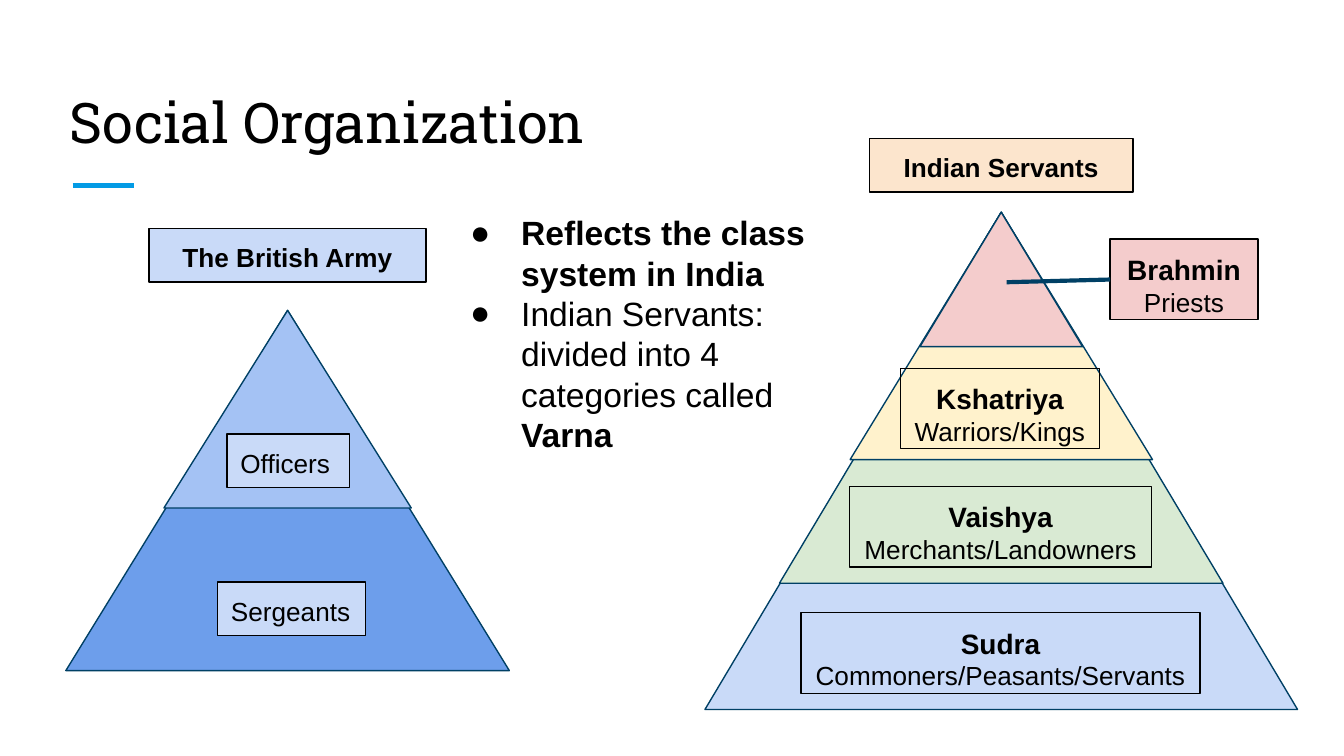
from dataclasses import dataclass, field

from lxml import etree
from pptx import Presentation
from pptx import util as u
from pptx.dml.color import RGBColor
from pptx.enum import shapes, text
from pptx.oxml.ns import qn

# The slide is a grid of 100 columns; rows have the same 0.1 inch size.
COLUMNS, ROWS = 100, 56.25
CELL = u.Inches(0.1)
INK, EDGE, ACCENT = "000000", "004065", "039BE5"
RED, BLUE = "F4CCCC", "C9DAF8"
LEFT, CENTER = text.PP_ALIGN.LEFT, text.PP_ALIGN.CENTER


@dataclass
class Run:
    text: str
    size: float = 14
    bold: bool = False
    font: str = "Arial"


@dataclass
class Box:
    column: float
    row: float
    columns: float
    rows: float
    paragraphs: list[list[Run]]
    fill: str | None = None
    align: int = CENTER


@dataclass
class Tier:
    columns: float
    rows: float
    fill: str


@dataclass
class Pyramid:
    """Triangles that share one apex, the widest first."""
    apex_column: float
    apex_row: float
    tiers: list[Tier] = field(default_factory=list)


def cells(*counts: float) -> list[int]:
    return [round(count * CELL) for count in counts]


def color(value: str) -> RGBColor:
    return RGBColor.from_string(value)


def heading(words: str) -> list[list[Run]]:
    return [[Run(words, bold=True)]]


def caste(name: str, members: str) -> list[list[Run]]:
    return [[Run(name, 15, True)], [Run(members)]]


def style(shape, fill: str | None, line: str) -> None:
    shape.shadow.inherit = False
    if fill:
        shape.fill.solid()
        shape.fill.fore_color.rgb = color(fill)
    else:
        shape.fill.background()
    shape.line.color.rgb = color(line)
    shape.line.width = u.Pt(0.75)


def write(shape, paragraphs: list[list[Run]], align: int = LEFT,
          anchor: int = text.MSO_ANCHOR.TOP, wrap: bool = True) -> None:
    frame = shape.text_frame
    margins = {f"margin_{side}": CELL for side in ("left", "top", "right", "bottom")}
    for name, value in {**margins, "vertical_anchor": anchor, "word_wrap": wrap}.items():
        setattr(frame, name, value)
    for index, runs in enumerate(paragraphs):
        paragraph = frame.add_paragraph() if index else frame.paragraphs[0]
        paragraph.alignment = align
        for item in runs:
            run = paragraph.add_run()
            run.text = item.text
            formats = {"name": item.font, "size": u.Pt(item.size), "bold": item.bold}
            for name, value in formats.items():
                setattr(run.font, name, value)
            run.font.color.rgb = color(INK)


def add_bullets(shape) -> None:
    for paragraph in shape.text_frame.paragraphs:
        properties = paragraph._p.get_or_add_pPr()
        properties.set("marL", str(u.Inches(0.5)))
        properties.set("indent", str(-u.Inches(0.38)))
        bullet_color = etree.SubElement(properties, qn("a:buClr"))
        etree.SubElement(bullet_color, qn("a:srgbClr"), val=INK)
        etree.SubElement(properties, qn("a:buFont"), typeface="Arial")
        etree.SubElement(properties, qn("a:buChar"), char="●")


def draw_pyramid(slide, pyramid: Pyramid) -> None:
    for tier in pyramid.tiers:
        place = cells(pyramid.apex_column - tier.columns / 2, pyramid.apex_row,
                      tier.columns, tier.rows)
        triangle = slide.shapes.add_shape(shapes.MSO_SHAPE.ISOSCELES_TRIANGLE, *place)
        style(triangle, tier.fill, EDGE)


def draw_box(slide, box: Box):
    place = cells(box.column, box.row, box.columns, box.rows)
    shape = slide.shapes.add_shape(shapes.MSO_SHAPE.RECTANGLE, *place)
    style(shape, box.fill, INK)
    write(shape, box.paragraphs, box.align, wrap=False)
    return shape


def draw_line(slide, ends: tuple, line: str, width: float):
    connector = slide.shapes.add_connector(shapes.MSO_CONNECTOR.STRAIGHT, *cells(*ends))
    connector.line.color.rgb = color(line)
    connector.line.width = u.Pt(width)
    etree.SubElement(connector._element.spPr, qn("a:effectLst"))
    return connector


ARMY = Pyramid(21.4, 23.1, [Tier(33, 26.8, "6D9EEB"), Tier(18.4, 14.7, "A4C2F4")])
SERVANTS = Pyramid(74.5, 15.8, [
    Tier(44.1, 37, BLUE), Tier(33, 27.6, "D9EAD3"),
    Tier(22.5, 18.4, "FFF2CC"), Tier(12.1, 10, RED)])
BRAHMIN = Box(82.6, 17.8, 11, 6, caste("Brahmin", "Priests"), RED)
BOXES = [
    Box(11.1, 17, 20.6, 4, heading("The British Army"), BLUE),
    Box(16.9, 32.3, 9.1, 4, [[Run("Officers")]], BLUE, LEFT),
    Box(16.2, 43.3, 11, 4, [[Run("Sergeants")]], BLUE, LEFT),
    Box(67, 27.4, 14.8, 6, caste("Kshatriya", "Warriors/Kings")),
    Box(63.2, 36.2, 22.5, 6, caste("Vaishya", "Merchants/Landowners")),
    Box(59.6, 45.6, 29.7, 6, caste("Sudra", "Commoners/Peasants/Servants")),
    Box(64.7, 10.3, 19.6, 4, heading("Indian Servants"), "FCE5CD"),
]
POINTS = [
    [Run("Reflects the class system in India", 18, True)],
    [Run("Indian Servants: divided into 4 categories called ", 18), Run("Varna", 18, True)],
]


def main() -> None:
    presentation = Presentation()
    presentation.slide_width, presentation.slide_height = cells(COLUMNS, ROWS)
    slide = presentation.slides.add_slide(presentation.slide_layouts[6])

    draw_line(slide, (5.4, 13.8, 10, 13.8), ACCENT, 3)
    title = slide.shapes.add_textbox(*cells(4.2, 5, 91.5, 7.5))
    write(title, [[Run("Social Organization", 30, font="Roboto Slab")]],
          anchor=text.MSO_ANCHOR.BOTTOM)

    for pyramid in (ARMY, SERVANTS):
        draw_pyramid(slide, pyramid)
    brahmin = draw_box(slide, BRAHMIN)
    pointer = draw_line(slide, (74.9, 21, 82.6, 20.8), EDGE, 2.25)
    pointer.end_connect(brahmin, 1)
    for box in BOXES:
        draw_box(slide, box)

    points = slide.shapes.add_textbox(*cells(32.8, 14.8, 29.7, 20.3))
    write(points, POINTS)
    add_bullets(points)

    presentation.save("out.pptx")


if __name__ == "__main__":
    main()
